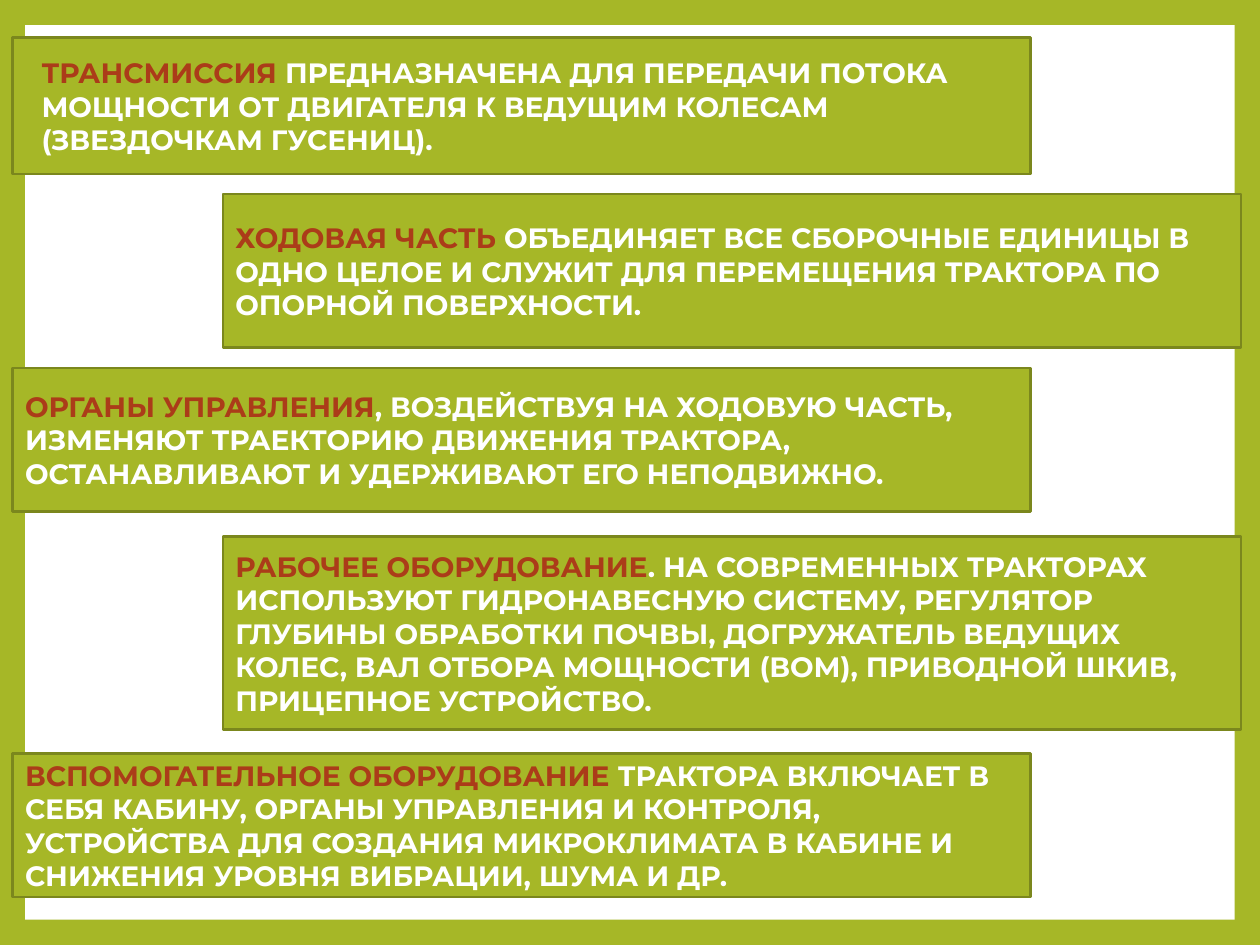
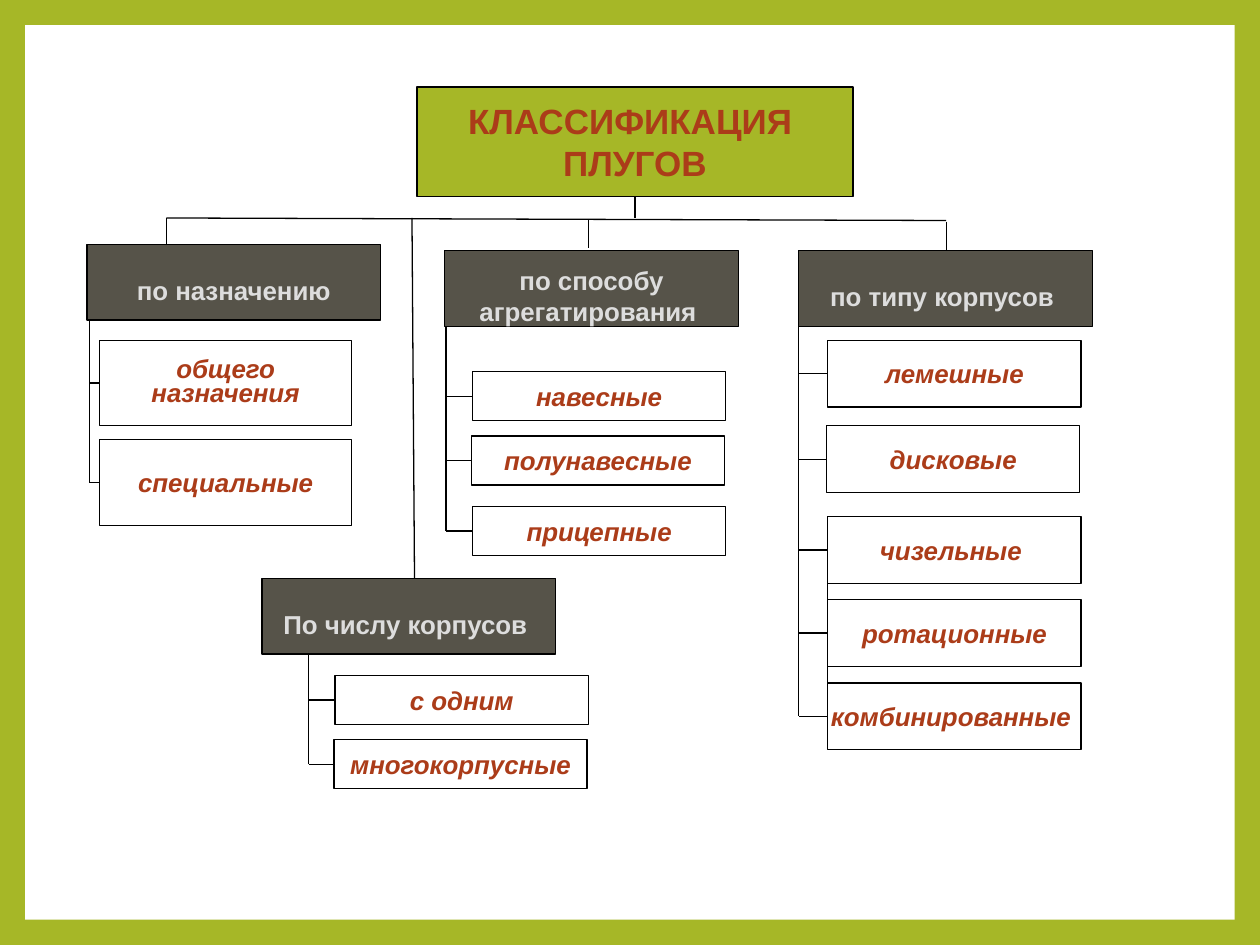
from pptx import Presentation, util as u
from pptx.dml.color import RGBColor
from pptx.enum import shapes, text
from pptx.oxml.ns import qn
from lxml import etree

GREEN, OLIVE, RUST = "A6B727", "7B871D", "AB3C19"
DARK, LIGHT, WHITE, BLACK = "565349", "DDDDDD", "FFFFFF", "000000"


def paint(target, color):
    """Give a fill or a font colour a solid hex colour."""
    if hasattr(target, "solid"):
        target.solid()
        target.fore_color.rgb = RGBColor.from_string(color)
    else:
        target.color.rgb = RGBColor.from_string(color)


def style_box(shape, fill, line, width, margins):
    """Set fill, outline and text frame of a box; margins are left, top, right, bottom."""
    if fill:
        paint(shape.fill, fill)
    else:
        shape.fill.background()
    paint(shape.line.fill, line)
    shape.line.width = u.Pt(width)
    shape.shadow.inherit = False
    frame = shape.text_frame
    frame.word_wrap = True
    frame.auto_size = text.MSO_AUTO_SIZE.NONE
    frame.vertical_anchor = text.MSO_ANCHOR.MIDDLE
    (frame.margin_left, frame.margin_top,
     frame.margin_right, frame.margin_bottom) = [u.Inches(margin) for margin in margins]


presentation = Presentation()
presentation.slide_width = u.Inches(10)
presentation.slide_height = u.Inches(7.5)
master = presentation.slide_master
parts_slide = presentation.slides.add_slide(presentation.slide_layouts[6])
plough_slide = presentation.slides.add_slide(presentation.slide_layouts[5])

# Shared background: green frame with a white panel on the master
paint(master.background.fill, GREEN)
panel = parts_slide.shapes.add_shape(
    shapes.MSO_SHAPE.RECTANGLE, u.Inches(0.2), u.Inches(0.2), u.Inches(9.6), u.Inches(7.1))
paint(panel.fill, WHITE)
panel.line.fill.background()
panel.shadow.inherit = False
master.shapes._spTree.insert(2, panel._element)

# Slide 1: tractor parts in bands that alternate left and right
bands = [
    (0.3, 1.08, "ТРАНСМИССИЯ",
     " ПРЕДНАЗНАЧЕНА ДЛЯ ПЕРЕДАЧИ ПОТОКА МОЩНОСТИ ОТ ДВИГАТЕЛЯ К ВЕДУЩИМ КОЛЕСАМ "
     "(ЗВЕЗДОЧКАМ ГУСЕНИЦ)."),
    (1.54, 1.22, "ХОДОВАЯ ЧАСТЬ ",
     "ОБЪЕДИНЯЕТ ВСЕ СБОРОЧНЫЕ ЕДИНИЦЫ В ОДНО ЦЕЛОЕ И СЛУЖИТ ДЛЯ ПЕРЕМЕЩЕНИЯ "
     "ТРАКТОРА ПО ОПОРНОЙ ПОВЕРХНОСТИ."),
    (2.92, 1.14, "ОРГАНЫ УПРАВЛЕНИЯ",
     ", ВОЗДЕЙСТВУЯ НА ХОДОВУЮ ЧАСТЬ, ИЗМЕНЯЮТ ТРАЕКТОРИЮ ДВИЖЕНИЯ ТРАКТОРА, "
     "ОСТАНАВЛИВАЮТ И УДЕРЖИВАЮТ ЕГО НЕПОДВИЖНО."),
    (4.26, 1.53, "РАБОЧЕЕ ОБОРУДОВАНИЕ",
     ". НА СОВРЕМЕННЫХ ТРАКТОРАХ ИСПОЛЬЗУЮТ ГИДРОНАВЕСНУЮ СИСТЕМУ, РЕГУЛЯТОР "
     "ГЛУБИНЫ ОБРАБОТКИ ПОЧВЫ, ДОГРУЖАТЕЛЬ ВЕДУЩИХ КОЛЕС, ВАЛ ОТБОРА МОЩНОСТИ (ВОМ), "
     "ПРИВОДНОЙ ШКИВ, ПРИЦЕПНОЕ УСТРОЙСТВО."),
    (5.98, 1.14, "ВСПОМОГАТЕЛЬНОЕ ОБОРУДОВАНИЕ ",
     "ТРАКТОРА ВКЛЮЧАЕТ В СЕБЯ КАБИНУ, ОРГАНЫ УПРАВЛЕНИЯ И КОНТРОЛЯ, УСТРОЙСТВА ДЛЯ "
     "СОЗДАНИЯ МИКРОКЛИМАТА В КАБИНЕ И СНИЖЕНИЯ УРОВНЯ ВИБРАЦИИ, ШУМА И ДР."),
]
for index, (top, height, term, description) in enumerate(bands):
    band = parts_slide.shapes.add_shape(
        shapes.MSO_SHAPE.RECTANGLE, u.Inches(1.77 if index % 2 else 0.1), u.Inches(top),
        u.Inches(8.08), u.Inches(height))
    left_margin = 0.23 if index == 0 else 0.1
    style_box(band, GREEN, OLIVE, 1.5, (left_margin, 0.05, 0.1, 0.05))
    paragraph = band.text_frame.paragraphs[0]
    paragraph.alignment = text.PP_ALIGN.LEFT
    for words, color in ((term, RUST), (description, WHITE)):
        run = paragraph.add_run()
        run.text = words
        run.font.name = "Montserrat"
        run.font.size = u.Pt(16)
        run.font.bold = True
        paint(run.font, color)

# Slide 2: title
title = plough_slide.shapes.title
title.left, title.top = u.Inches(3.31), u.Inches(0.69)
title.width, title.height = u.Inches(3.46), u.Inches(0.87)
style_box(title, GREEN, BLACK, 0.75, (0, 0, 0, 0))
title.text_frame.text = "КЛАССИФИКАЦИЯ \nПЛУГОВ"
for paragraph in title.text_frame.paragraphs:
    paragraph.alignment = text.PP_ALIGN.CENTER
    paragraph.font.name = "Arial"
    paragraph.font.size = u.Pt(20)
    paragraph.font.bold = True
    paint(paragraph.font, RUST)

# Groups: heading, left, top, trunk x, leaf width, leaf height, leaves (words, left, top)
groups = [
    ("по назначению", 0.69, 1.94, 0.71, 2, 0.68,
     [("общего назначения", 0.79, 2.7), ("специальные", 0.79, 3.49)]),
    ("по способу агрегатирования ", 3.53, 1.99, 3.54, 2.01, 0.39,
     [("навесные", 3.75, 2.95), ("полунавесные", 3.74, 3.46), ("прицепные", 3.75, 4.02)]),
    ("по типу корпусов ", 6.34, 1.99, 6.34, 2.01, 0.53,
     [("лемешные", 6.57, 2.7), ("дисковые", 6.56, 3.38), ("чизельные ", 6.57, 4.1),
      ("ротационные", 6.57, 4.76), ("комбинированные ", 6.57, 5.42)]),
    ("По числу корпусов ", 2.08, 4.59, 2.45, 2.01, 0.39,
     [("с одним", 2.66, 5.36), ("многокорпусные", 2.65, 5.87)]),
]

# Lines from the title to the headings, and the edge joining the last plough types
lines = [
    (1.32, 1.73, 7.51, 1.75),
    (5.04, 1.56, 5.04, 1.73),
    (1.32, 1.73, 1.32, 1.94),
    (4.67, 1.74, 4.67, 1.97),
    (7.51, 1.76, 7.51, 1.99),
    (3.27, 1.73, 3.29, 4.59),
    (6.57, 4.44, 6.57, 5.69),
]

# Heading and leaf boxes; each leaf hangs on its group's trunk
boxes = []
for heading, left, top, trunk, leaf_width, leaf_height, leaves in groups:
    boxes.append((heading, left, top, 2.33, 0.6, True))
    for words, leaf_left, leaf_top in leaves:
        boxes.append((words, leaf_left, leaf_top, leaf_width, leaf_height, False))
        middle = leaf_top + leaf_height / 2
        lines.append((trunk, middle, leaf_left, middle))
    lines.append((trunk, top + 0.6, trunk, middle))

for words, left, top, width, height, is_heading in boxes:
    box = plough_slide.shapes.add_shape(
        shapes.MSO_SHAPE.RECTANGLE, u.Inches(left), u.Inches(top),
        u.Inches(width), u.Inches(height))
    style_box(box, DARK if is_heading else None, BLACK, 0.75,
              (0, 0.12 if is_heading else 0, 0, 0))
    box.text_frame.text = words
    paragraph = box.text_frame.paragraphs[0]
    paragraph.alignment = text.PP_ALIGN.CENTER
    if words == "общего назначения":
        paragraph.line_spacing = 0.8
    font = paragraph.runs[0].font
    font.name = "Arial"
    font.size = u.Pt(14.8)
    font.bold = True
    font.italic = not is_heading
    paint(font, LIGHT if is_heading else RUST)

for ends in lines:
    connector = plough_slide.shapes.add_connector(
        shapes.MSO_CONNECTOR.STRAIGHT, *[u.Inches(end) for end in ends])
    paint(connector.line.fill, BLACK)
    connector.line.width = u.Pt(0.75)
    etree.SubElement(connector._element.spPr, qn("a:effectLst"))

presentation.save("out.pptx")
